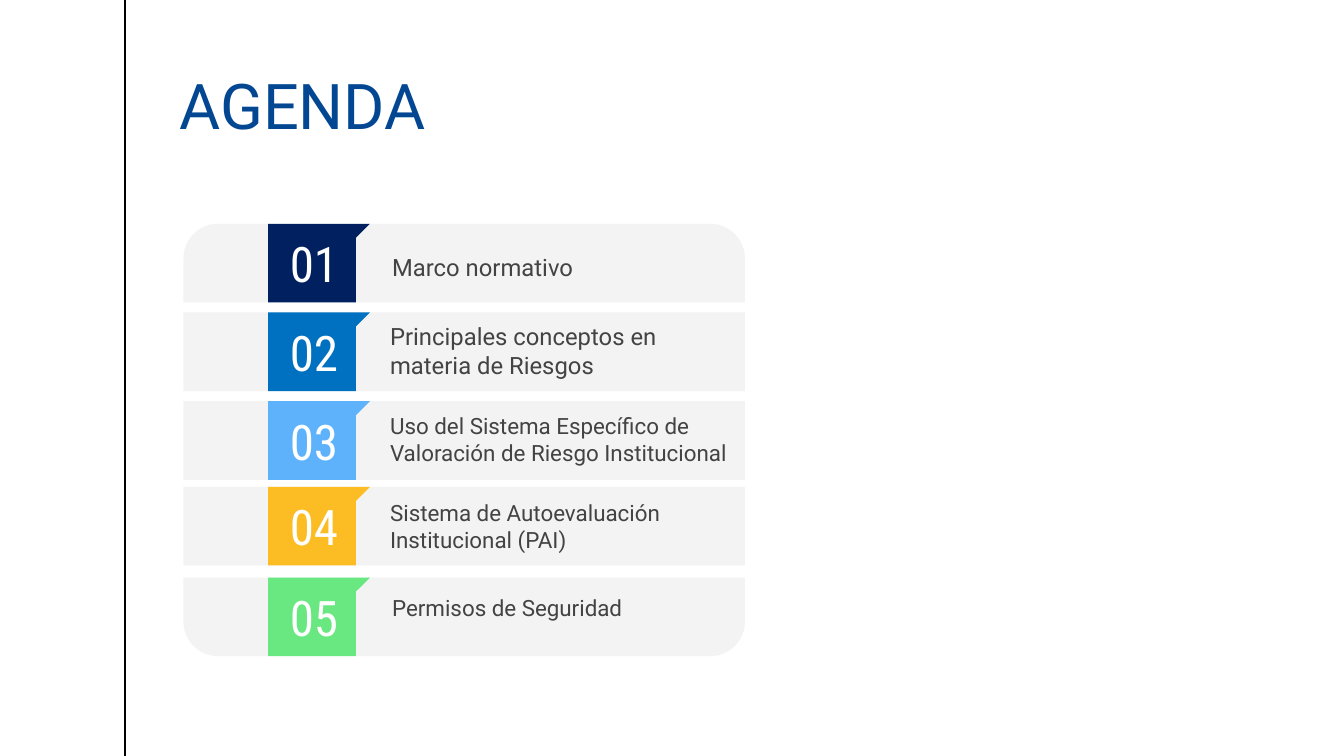
import pptx
import pptx.util
import pptx.dml.color
import pptx.enum.shapes
import pptx.enum.text
import pptx.oxml.ns
import lxml.etree

RGB = pptx.dml.color.RGBColor
SHAPE = pptx.enum.shapes.MSO_SHAPE
ANCHOR = pptx.enum.text.MSO_ANCHOR
ALIGN = pptx.enum.text.PP_ALIGN

BLACK = RGB(0x00, 0x00, 0x00)
WHITE = RGB(0xFF, 0xFF, 0xFF)
HEADING_BLUE = RGB(0x03, 0x47, 0x93)
BAR_GREY = RGB(0xF3, 0xF3, 0xF3)
TEXT_GREY = RGB(0x43, 0x43, 0x43)
NAVY = RGB(0x00, 0x20, 0x60)
BLUE = RGB(0x00, 0x70, 0xC0)
SKY = RGB(0x5E, 0xB2, 0xFC)
AMBER = RGB(0xFC, 0xBD, 0x24)
GREEN = RGB(0x69, 0xE7, 0x81)

COLUMNS, ROWS = 160, 90
BAR_LEFT, BAR_WIDTH, BAR_HEIGHT = 21.84, 66.84, 9.36
TAB_LEFT, TAB_WIDTH, TAB_BASE, TAB_NOTCH = 31.92, 12.12, 10.44, 1.68
CORNER = 0.44

TOPICS = [
    ("Marco normativo", NAVY, 26.64, 17, (45.48, 29.4, 42.12, 4.8)),
    ("Principales conceptos en materia de Riesgos", BLUE, 37.2, 17,
     (45.24, 39.36, 43.8, 4.8)),
    ("Uso del Sistema Específico de Valoración de Riesgo Institucional", SKY, 47.76, 16,
     (45.24, 48.72, 43.2, 7.2)),
    ("Sistema de Autoevaluación Institucional (PAI)", AMBER, 57.96, 16,
     (45.24, 60.24, 42.12, 4.8)),
    ("Permisos de Seguridad", GREEN, 68.76, 16, (45.48, 69.96, 42.12, 4.8)),
]


class AgendaSlide:
    frame_format = {
        "word_wrap": True,
        "auto_size": pptx.enum.text.MSO_AUTO_SIZE.NONE,
        "vertical_anchor": ANCHOR.MIDDLE,
    }

    def __init__(self, deck):
        self.cell_width = deck.slide_width / COLUMNS
        self.cell_height = deck.slide_height / ROWS
        self.slide = deck.slides.add_slide(deck.slide_layouts[5])

    def x(self, columns):
        return round(columns * self.cell_width)

    def y(self, rows):
        return round(rows * self.cell_height)

    def box(self, left, top, width, height):
        return self.x(left), self.y(top), self.x(width), self.y(height)

    def apply(self, target, values):
        for key, value in values.items():
            setattr(target, key, value)

    def paint(self, shape, color):
        shape.shadow.inherit = False
        shape.fill.solid()
        shape.fill.fore_color.rgb = color
        shape.line.fill.background()

    def put_text(self, shape, wording, size, color, font="Roboto", align=ALIGN.LEFT,
                 margins=(1.2, 1.2, 1.2, 1.2), **frame_values):
        frame = shape.text_frame
        left, top, right, bottom = margins
        self.apply(frame, {
            **self.frame_format,
            "margin_left": self.x(left), "margin_top": self.y(top),
            "margin_right": self.x(right), "margin_bottom": self.y(bottom),
            **frame_values,
        })
        paragraph = frame.paragraphs[0]
        paragraph.alignment = align
        run = paragraph.add_run()
        run.text = wording
        self.apply(run.font, {"name": font, "size": pptx.util.Pt(size)})
        run.font.color.rgb = color
        return paragraph

    def heading(self, wording):
        title = self.slide.shapes.title
        sides = ("left", "top", "width", "height")
        self.apply(title, dict(zip(sides, self.box(21.36, 4.44, 132.96, 13.2))))
        paragraph = self.put_text(title, wording, 45, HEADING_BLUE,
                                  margins=(0, 0.6, 0, 0.6),
                                  vertical_anchor=ANCHOR.BOTTOM)
        paragraph.line_spacing = 0.9

    def margin_rule(self, column):
        rule = self.slide.shapes.add_connector(
            pptx.enum.shapes.MSO_CONNECTOR.STRAIGHT,
            self.x(column), 0, self.x(column), self.y(ROWS))
        rule.line.color.rgb = BLACK
        rule.line.width = pptx.util.Pt(1)
        properties = rule._element.find(pptx.oxml.ns.qn("p:spPr"))
        lxml.etree.SubElement(properties, pptx.oxml.ns.qn("a:effectLst"))

    def bar(self, top, corners):
        outline = SHAPE.ROUND_2_SAME_RECTANGLE if any(corners) else SHAPE.RECTANGLE
        bar = self.slide.shapes.add_shape(
            outline, *self.box(BAR_LEFT, top, BAR_WIDTH, BAR_HEIGHT))
        if any(corners):
            bar.adjustments[0], bar.adjustments[1] = corners
        self.paint(bar, BAR_GREY)

    def number_tab(self, top, number, color):
        base, bottom = TAB_LEFT + TAB_BASE, top + BAR_HEIGHT
        corners = [(TAB_LEFT, bottom), (base, bottom), (base, top + TAB_NOTCH),
                   (TAB_LEFT + TAB_WIDTH, top)]
        builder = self.slide.shapes.build_freeform(self.x(TAB_LEFT), self.y(top))
        builder.add_line_segments([(self.x(c), self.y(r)) for c, r in corners])
        tab = builder.convert_to_shape()
        self.paint(tab, color)
        self.put_text(tab, f"{number:02}", 35, WHITE, "Roboto Condensed", ALIGN.CENTER,
                      (1.2, 1.2, 2.4, 1.2))

    def topic(self, wording, size, area):
        label = self.slide.shapes.add_textbox(*self.box(*area))
        self.put_text(label, wording, size, TEXT_GREY)


def main():
    deck = pptx.Presentation()
    deck.slide_width = pptx.util.Inches(13.33)
    deck.slide_height = pptx.util.Inches(7.5)
    agenda = AgendaSlide(deck)
    agenda.margin_rule(14.88)
    agenda.heading("AGENDA")
    for number, (wording, color, top, size, area) in enumerate(TOPICS, 1):
        corners = (CORNER if number == 1 else 0,
                   CORNER if number == len(TOPICS) else 0)
        agenda.bar(top, corners)
        agenda.number_tab(top, number, color)
        agenda.topic(wording, size, area)
    deck.save("out.pptx")


if __name__ == "__main__":
    main()
